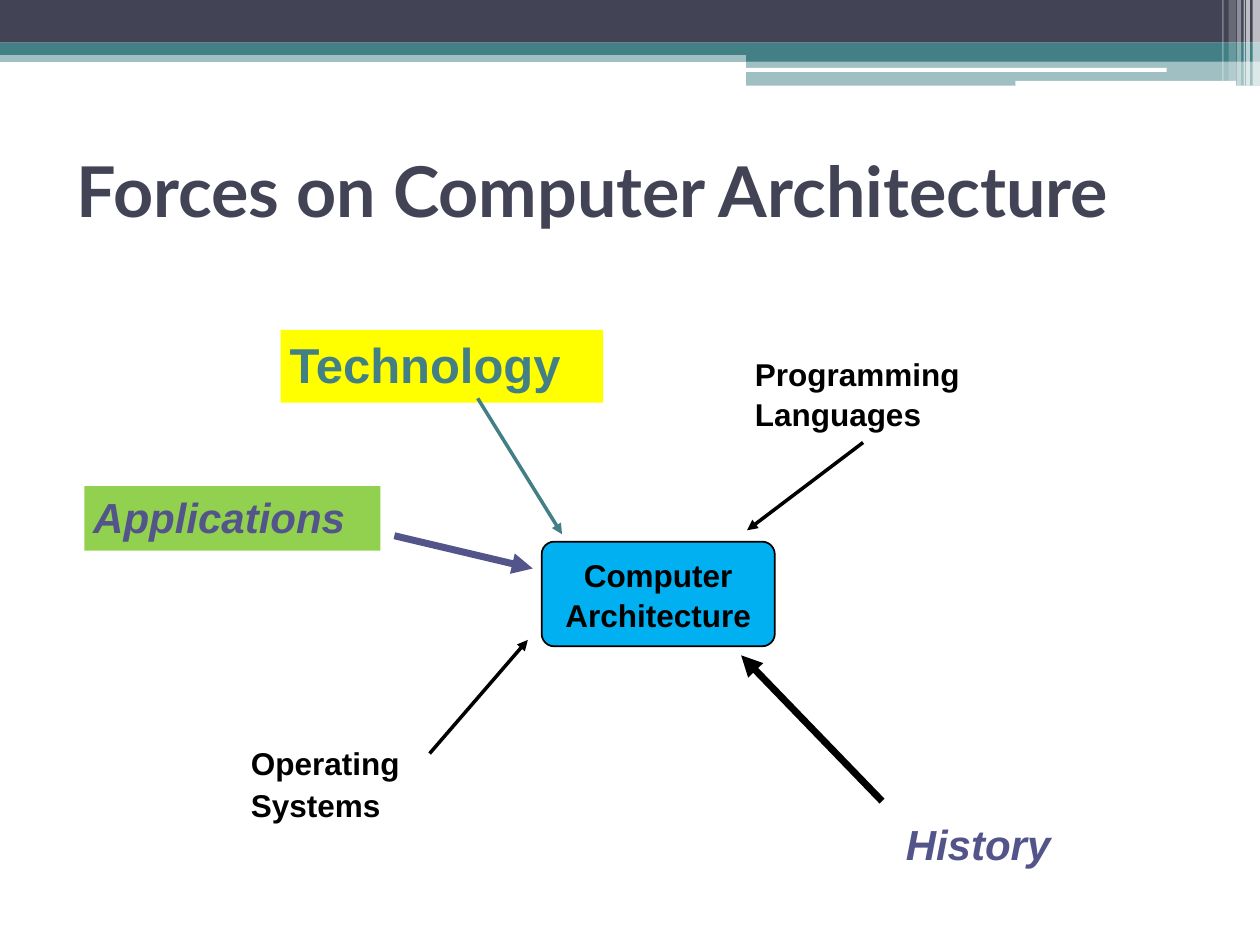
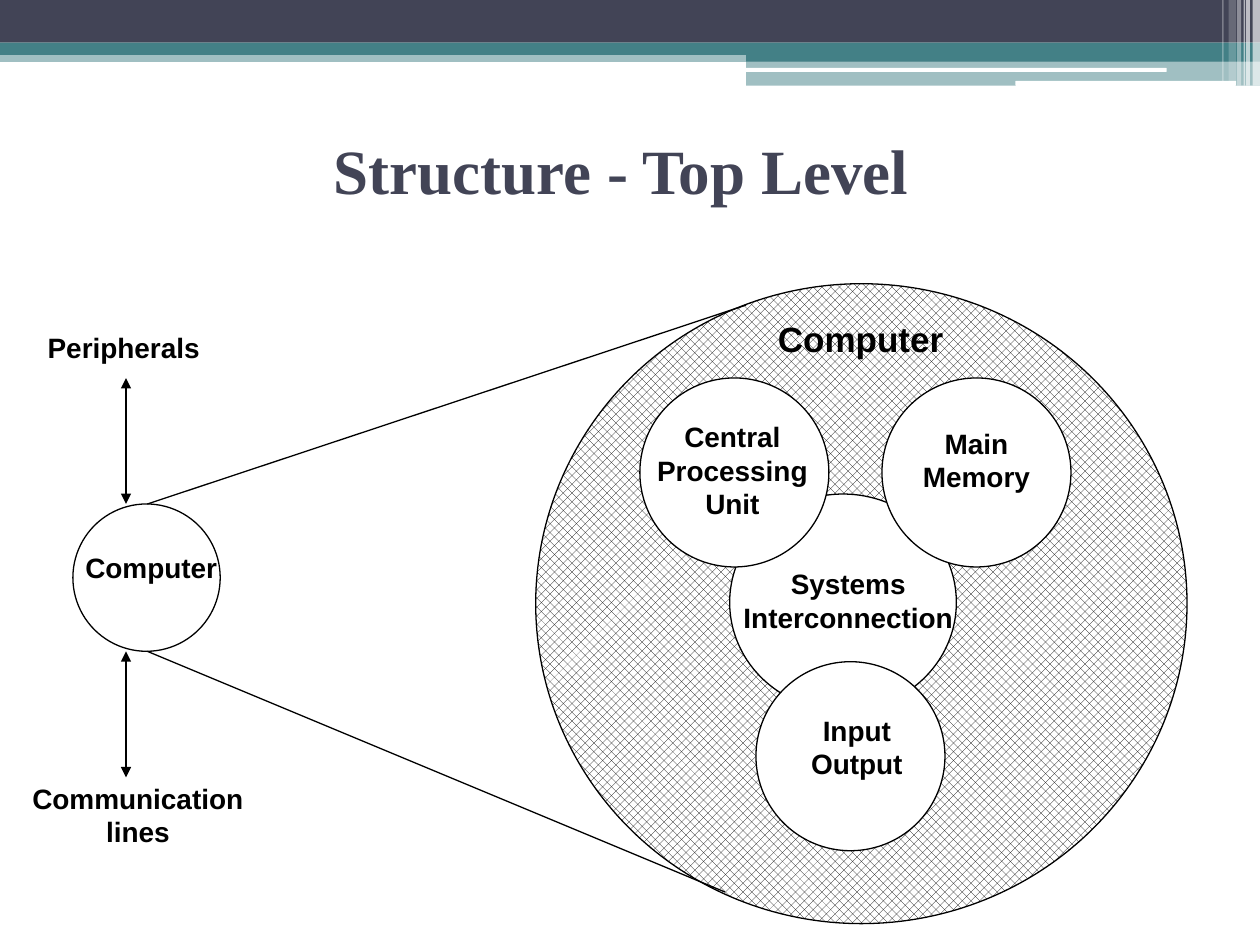
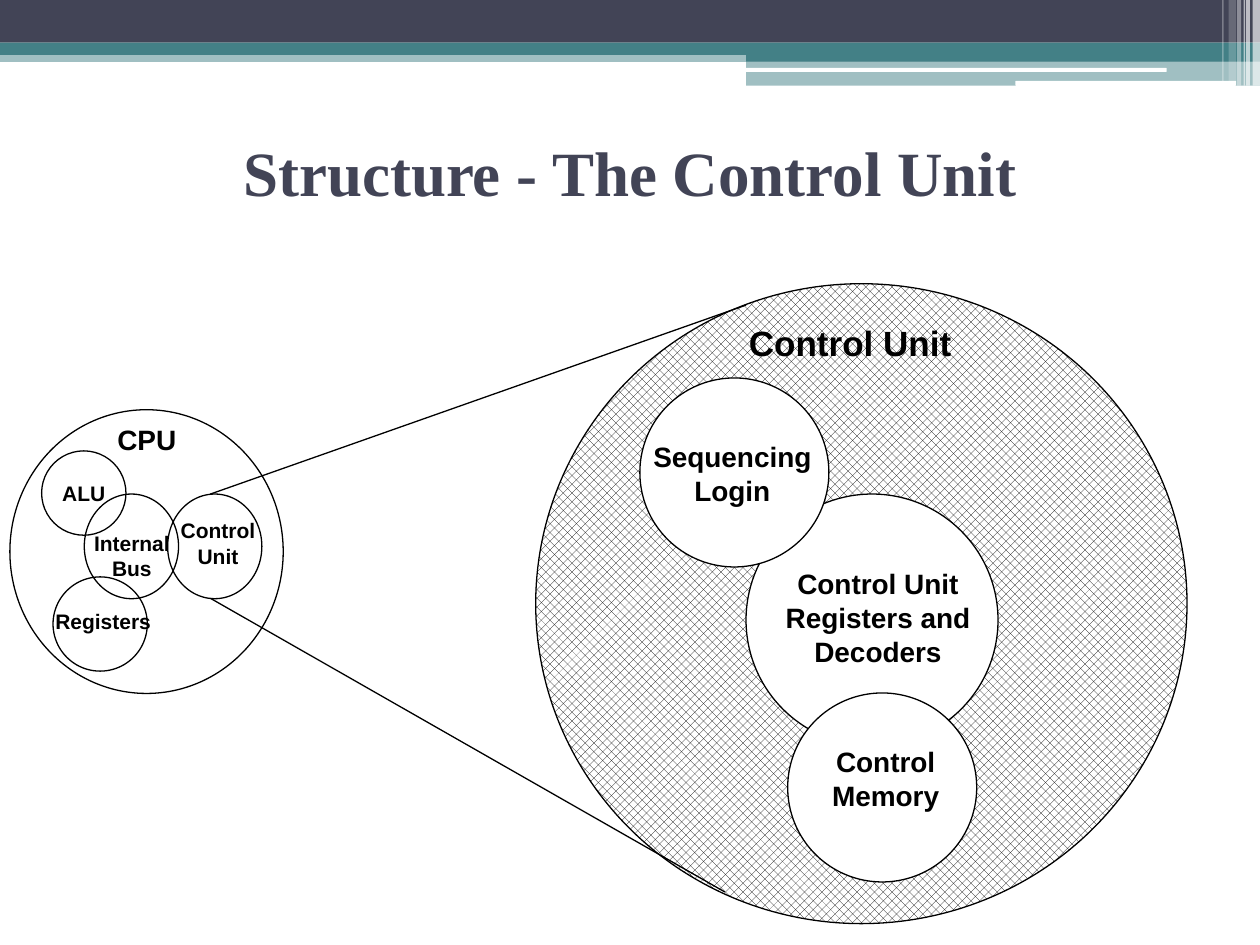
from lxml.etree import SubElement
from pptx import Presentation
from pptx.dml.color import RGBColor
from pptx.enum.dml import MSO_PATTERN
from pptx.enum.shapes import MSO_CONNECTOR, MSO_SHAPE as SHAPE
from pptx.enum.text import MSO_ANCHOR as ANCHOR, MSO_AUTO_SIZE as AUTO, PP_ALIGN as ALIGN
from pptx.oxml.ns import qn
from pptx.util import Cm, Pt

COLORS = {"navy": "424456", "teal": "438086", "white": "FFFFFF", "black": "000000",
          "violet": "53548A", "blue": "00B0F0", "yellow": "FFFF00", "green": "92D050"}

# All positions and lengths are in centimetres: left, top, width, height.
BANDS = [  # box, colour, opacity in percent
    ((0, 1.02, 25.4, 0.23), "teal", 50),
    ((0, 0, 25.4, 0.86), "navy", 100),
    ((0, 0.86, 25.4, 0.25), "teal", 100),
    ((15.04, 0.99, 10.36, 0.25), "teal", 100),
    ((15.04, 1.22, 10.36, 0.51), "teal", 50),
]
BARS = [(15.01, 1.37, 8.51, 0.08), (20.47, 1.63, 4.45, 0.1)]
STRIPES = [  # left, width, height, opacity in percent
    (25.25, 0.15, 1.73, 65), (25.12, 0.08, 1.73, 65), (25.07, 0.03, 1.73, 60),
    (24.94, 0.08, 1.73, 40), (24.77, 0.15, 1.63, 20), (24.64, 0.03, 1.63, 30),
]
TITLE_SIZE = (22.86, 2.97)
SERIF_TITLE = {"name": "Times New Roman", "size": 36}

CORE = (["Computer", "Architecture"], (10.92, 10.92, 4.7, 2.11))
FORCES = [  # text, box, font, fill, line spacing
    ("Technology", (5.66, 6.65, 6.5, 1.47), {"size": 28, "color": "teal"}, "yellow", 1.02),
    ("Programming", (15.04, 7.06, 4.93, 1.02), {"size": 18}, None, 1.02),
    ("Languages", (15.04, 7.87, 4.09, 1.02), {"size": 18}, None, 1.02),
    ("Operating", (4.88, 14.91, 3.68, 1.02), {"size": 18}, None, 1.02),
    ("Systems", (4.88, 15.75, 3.28, 1.02), {"size": 18}, None, 1.02),
    ("History", (18.08, 16.48, 3.61, 1.24),
     {"size": 24, "color": "violet", "italic": True}, None, 0.97),
    ("Applications", (1.7, 9.8, 5.97, 1.3),
     {"size": 24, "color": "violet", "italic": True}, "green", 1.02),
]
FORCE_ARROWS = [  # start, end, colour, width
    ((7.95, 10.8), (10.74, 11.46), "violet", 4),
    ((8.66, 15.19), (10.64, 12.9), "black", 2),
    ((9.63, 8.03), (11.33, 10.77), "teal", 2),
    ((17.4, 8.92), (15.06, 10.69), "black", 2),
    ((17.78, 16.15), (14.94, 13.21), "black", 4),
]

DETAIL = (10.8, 5.72, 13.13, 12.9)
ZOOM_ENDS = [(15.04, 6.15), (14.61, 17.98)]
STRUCTURES = [
    {
        "title": ("Structure - Top Level", (1.09, 1.93)),
        "circles": [  # box, fill
            ((14.71, 9.96, 4.57, 4.37), "white"),
            ((12.9, 7.62, 3.81, 3.81), "white"),
            ((1.47, 10.16, 2.97, 2.97), None),
            ((17.78, 7.62, 3.81, 3.81), "white"),
            ((15.24, 13.34, 3.81, 3.81), "white"),
        ],
        "zoom_starts": [(2.97, 10.16), (2.97, 13.13)],
        "arrows": [((2.54, 7.62), (2.54, 10.16)), ((2.54, 13.13), (2.54, 15.67))],
        "labels": [  # lines, left, top, width, size
            (["Computer"], 1.45, 10.97, 3.2, 16),
            (["Main", "Memory"], 18.34, 8.46, 2.69, 16),
            (["Input", "Output"], 16.08, 14.25, 2.39, 16),
            (["Systems", "Interconnection"], 14.71, 11.3, 4.78, 16),
            (["Peripherals"], 0.69, 6.53, 3.61, 16),
            (["Communication", "lines"], 0.38, 15.62, 4.8, 16),
            (["Central", "Processing", "Unit"], 12.9, 8.33, 3.73, 16),
            (["Computer"], 15.42, 6.27, 3.86, 20),
        ],
    },
    {
        "title": ("Structure - The Control Unit", (1.27, 1.96)),
        "circles": [
            ((15.04, 9.96, 5.08, 5.08), "white"),
            ((12.9, 7.62, 3.81, 3.81), "white"),
            ((0.2, 8.26, 5.51, 5.72), None),
            ((15.88, 13.97, 3.81, 3.81), "white"),
            ((3.38, 9.96, 1.9, 2.11), None),
            ((0.84, 9.09, 1.7, 1.7), None),
            ((1.07, 11.63, 1.9, 1.9), None),
            ((1.7, 9.96, 1.9, 2.11), None),
        ],
        "zoom_starts": [(4.24, 9.96), (4.24, 12.06)],
        "arrows": [],
        "labels": [
            (["CPU"], 2.11, 8.38, 1.7, 16),
            (["Control", "Memory"], 16.51, 14.88, 2.69, 16),
            (["Control Unit", "Registers and", "Decoders"], 15.49, 11.3, 4.42, 16),
            (["Sequencing", "Login"], 12.9, 8.74, 3.73, 16),
            (["Control", "Unit"], 3.38, 10.31, 2.03, 12),
            (["ALU"], 0.84, 9.55, 1.7, 12),
            (["Registers"], 0.86, 12.14, 2.44, 12),
            (["Internal", "Bus"], 1.63, 10.57, 2.06, 12),
            (["Control Unit"], 14.83, 6.35, 4.62, 20),
        ],
    },
]


def rgb(color):
    return RGBColor.from_string(COLORS[color])


def cm(values):
    return [Cm(v) for v in values]


def add_shape(s, kind, box, fill=None, opacity=100, line=None):
    sp = s.shapes.add_shape(kind, *cm(box))
    sp.shadow.inherit = False
    if fill:
        sp.fill.solid()
        sp.fill.fore_color.rgb = rgb(fill)
    else:
        sp.fill.background()
    if opacity < 100:
        clr = sp.fill._xPr.find(qn("a:solidFill"))[0]
        SubElement(clr, qn("a:alpha"), val=str(opacity * 1000))
    if line:
        sp.line.color.rgb = rgb("black")
        sp.line.width = Pt(line)
    else:
        sp.line.fill.background()
    return sp


def write(sp, lines, font, align=ALIGN.CENTER, spacing=None, inset=(0.25, 0.13), **frame):
    """Fill a shape with one paragraph per line, all in one font."""
    tf = sp.text_frame
    tf.margin_left = tf.margin_right = Cm(inset[0])
    tf.margin_top = tf.margin_bottom = Cm(inset[1])
    layout = {"word_wrap": False, "auto_size": AUTO.SHAPE_TO_FIT_TEXT,
              "vertical_anchor": ANCHOR.TOP}
    for key, value in {**layout, **frame}.items():
        setattr(tf, key, value)
    font = {"name": "Arial", "bold": True, "color": "black", **font}
    for i, text in enumerate(lines):
        p = tf.paragraphs[0] if i == 0 else tf.add_paragraph()
        p.alignment = align
        p.line_spacing = spacing
        r = p.add_run()
        r.text = text
        for key, value in font.items():
            if key == "color":
                r.font.color.rgb = rgb(value)
            else:
                setattr(r.font, key, Pt(value) if key == "size" else value)


def add_line(s, start, end, color="black", width=0.75, heads=()):
    """Draw a line; heads may name headEnd (at start) and tailEnd (at end)."""
    cx = s.shapes.add_connector(MSO_CONNECTOR.STRAIGHT, *cm(start + end))
    cx.line.color.rgb = rgb(color)
    cx.line.width = Pt(width)
    for head in heads:
        SubElement(cx.line._get_or_add_ln(), qn(f"a:{head}"), type="triangle")
    SubElement(cx._element.spPr, qn("a:effectLst"))


def new_slide(prs, title, corner, font, align=ALIGN.CENTER):
    s = prs.slides.add_slide(prs.slide_layouts[6])
    for box, color, opacity in BANDS:
        add_shape(s, SHAPE.RECTANGLE, box, color, opacity)
    for box in BARS:
        add_shape(s, SHAPE.ROUNDED_RECTANGLE, box, "white")
    for left, width, height, opacity in STRIPES:
        add_shape(s, SHAPE.RECTANGLE, (left, 0, width, height), "white", opacity)
    write(s.shapes.add_textbox(*cm(corner + TITLE_SIZE)), [title], {**font, "color": "navy"},
          align, word_wrap=True, auto_size=AUTO.NONE, vertical_anchor=ANCHOR.MIDDLE)
    return s


def forces_slide(prs):
    s = new_slide(prs, "Forces on Computer Architecture", (1.3, 2.34),
                  {"name": "Lato", "size": 40}, ALIGN.LEFT)
    inset = (0.18, 0.08)
    lines, box = CORE
    core = add_shape(s, SHAPE.ROUNDED_RECTANGLE, box, "blue", line=1)
    core.adjustments[0] = 0.12
    write(core, lines, {"size": 18}, spacing=1.06, inset=inset, vertical_anchor=ANCHOR.MIDDLE)
    for text, box, font, fill, spacing in FORCES:
        if fill:
            sp = add_shape(s, SHAPE.RECTANGLE, box, fill)
        else:
            sp = s.shapes.add_textbox(*cm(box))
        write(sp, [text], font, ALIGN.LEFT, spacing, inset)
    for start, end, color, width in FORCE_ARROWS:
        add_line(s, start, end, color, width, ["tailEnd"])


def structure_slide(prs, content):
    s = new_slide(prs, *content["title"], SERIF_TITLE)
    detail = add_shape(s, SHAPE.OVAL, DETAIL, line=0.75)
    detail.fill.patterned()
    detail.fill.pattern = MSO_PATTERN.PERCENT_50
    detail.fill.fore_color.rgb = rgb("black")
    detail.fill.back_color.rgb = rgb("white")
    for box, fill in content["circles"]:
        add_shape(s, SHAPE.OVAL, box, fill, line=0.75)
    for start, end in zip(content["zoom_starts"], ZOOM_ENDS):
        add_line(s, start, end)
    for start, end in content["arrows"]:
        add_line(s, start, end, heads=["headEnd", "tailEnd"])
    for lines, left, top, width, size in content["labels"]:
        height = 0.26 + 0.0425 * size * len(lines)
        write(s.shapes.add_textbox(*cm((left, top, width, height))), lines, {"size": size})


def main():
    prs = Presentation()
    prs.slide_width, prs.slide_height = Cm(25.4), Cm(19.05)
    forces_slide(prs)
    for content in STRUCTURES:
        structure_slide(prs, content)
    prs.save("out.pptx")


if __name__ == "__main__":
    main()
